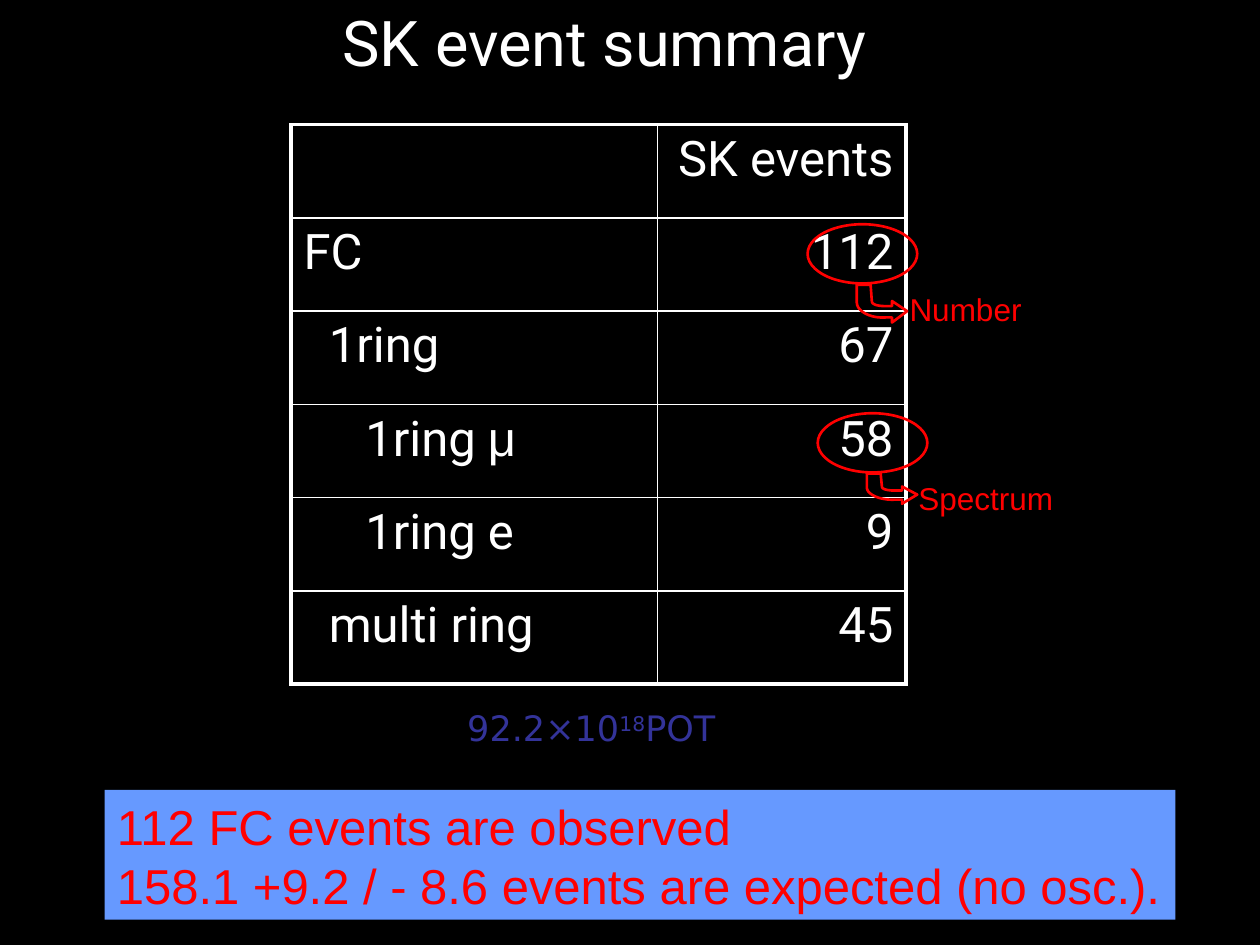
from dataclasses import dataclass

from lxml.etree import SubElement
from pptx import Presentation
from pptx.dml.color import RGBColor
from pptx.enum.shapes import MSO_SHAPE
from pptx.enum.text import PP_ALIGN
from pptx.oxml.ns import qn
from pptx.util import Inches, Pt

BLACK = RGBColor(0x00, 0x00, 0x00)
WHITE = RGBColor(0xFF, 0xFF, 0xFF)
RED = RGBColor(0xFF, 0x00, 0x00)
NAVY = RGBColor(0x33, 0x33, 0x99)
SKY = RGBColor(0x66, 0x99, 0xFF)

ARROW_START = [(0.4, 0.22), (0.28, 0.31), (0.28, 0.27), (0.23, 0.27)]
ARROW_OUTER = [(0.23, 0.27), (0.11, 0.28), (0, 0.22), (0, 0.15)]
ARROW_STEM = [(0, 0.01), (0.11, 0.01), (0.12, 0.14)]
ARROW_INNER = [(0.12, 0.14), (0.12, 0.17), (0.17, 0.18), (0.23, 0.18)]
ARROW_END = [(0.28, 0.18), (0.28, 0.14)]


@dataclass(frozen=True)
class TextStyle:
    font: str
    size: int
    color: RGBColor


@dataclass(frozen=True)
class Label:
    lines: tuple
    left: float
    top: float
    width: float
    height: float
    style: TextStyle
    fill: RGBColor | None = None


@dataclass(frozen=True)
class EventRow:
    name: str
    count: str
    indent: float = 0
    symbol: str = ""


@dataclass(frozen=True)
class Callout:
    left: float
    top: float
    arrow_stretch: float


TABLE_STYLE = TextStyle("Roboto", 28, WHITE)
NOTE_STYLE = TextStyle("Arial", 18, RED)
LABELS = [
    Label(("SK event summary",), 2.62, -0.02, 4.42, 0.7, TextStyle("Roboto", 36, WHITE)),
    Label((("92.2×10", "18", "POT"),), 3.61, 5.56, 2.25, 0.43,
          TextStyle("DejaVu Sans", 20, NAVY)),
    Label(("112 FC events are observed",
           "158.1 +9.2 / - 8.6 events are expected (no osc.)."),
          0.83, 6.27, 8.5, 1.03, TextStyle("Arial", 28, RED), SKY),
    Label(("Number",), 7.12, 2.25, 1.09, 0.4, NOTE_STYLE),
    Label(("Spectrum",), 7.19, 3.75, 1.27, 0.4, NOTE_STYLE),
]
ROWS = [
    EventRow("", "SK events"),
    EventRow("FC", "112"),
    EventRow("1ring", "67", 0.2),
    EventRow("1ring ", "58", 0.49, "μ"),
    EventRow("1ring e", "9", 0.49),
    EventRow("multi ring", "45", 0.2),
]
CALLOUTS = [Callout(6.41, 1.78, 1), Callout(6.49, 3.28, 0.8)]


def style_paragraph(para, style: TextStyle) -> None:
    para.font.name = style.font
    para.font.size = Pt(style.size)
    para.font.color.rgb = style.color


def add_label(page, label: Label) -> None:
    box = page.shapes.add_textbox(Inches(label.left), Inches(label.top),
                                  Inches(label.width), Inches(label.height))
    if label.fill is not None:
        box.fill.solid()
        box.fill.fore_color.rgb = label.fill
    frame = box.text_frame
    frame.word_wrap = False
    for index, line in enumerate(label.lines):
        para = frame.add_paragraph() if index else frame.paragraphs[0]
        style_paragraph(para, label.style)
        spans = (line,) if isinstance(line, str) else line
        for position, text in enumerate(spans):
            span = para.add_run()
            span.text = text
            if position == 1:
                span.font._element.set("baseline", "30000")


def set_border(cell, side: str, width: float) -> None:
    line = SubElement(cell._tc.get_or_add_tcPr(), qn(f"a:{side}"), w=str(Pt(width)))
    fill = SubElement(line, qn("a:solidFill"))
    SubElement(fill, qn("a:srgbClr"), val=str(WHITE))


def fill_cell(cell, text: str, outer_sides: set) -> None:
    for side in ("lnL", "lnR", "lnT", "lnB"):
        set_border(cell, side, 2.25 if side in outer_sides else 1)
    cell.fill.background()
    para = cell.text_frame.paragraphs[0]
    style_paragraph(para, TABLE_STYLE)
    if text:
        para.add_run().text = text


def add_event_table(page, rows: list[EventRow]) -> None:
    table = page.shapes.add_table(len(rows), 2, Inches(2.31), Inches(0.99),
                                  Inches(4.88), Inches(4.44)).table
    table.first_row = table.horz_banding = False
    table.columns[0].width = Inches(2.91)
    table.columns[1].width = Inches(1.97)
    for index, row in enumerate(rows):
        table.rows[index].height = Inches(0.74)
        edges = {0: {"lnT"}, len(rows) - 1: {"lnB"}}.get(index, set())
        name, count = table.cell(index, 0), table.cell(index, 1)
        fill_cell(name, row.name, edges | {"lnL"})
        fill_cell(count, row.count, edges | {"lnR"})
        name.margin_left = Inches(0.1 + row.indent)
        count.text_frame.paragraphs[0].alignment = PP_ALIGN.RIGHT
        if row.symbol:
            span = name.text_frame.paragraphs[0].add_run()
            span.text = row.symbol
            span.font.name = "Arial"


def curve(points: list, steps: int = 10) -> list:
    weights = [((1 - t) ** 3, 3 * t * (1 - t) ** 2, 3 * t * t * (1 - t), t ** 3)
               for t in (step / steps for step in range(1, steps + 1))]
    return [tuple(sum(w * point[axis] for w, point in zip(row, points)) for axis in (0, 1))
            for row in weights]


def outline_red(shape) -> None:
    shape.shadow.inherit = False
    shape.fill.background()
    shape.line.color.rgb = RED
    shape.line.width = Pt(1.5)


def add_callout(page, callout: Callout) -> None:
    outline_red(page.shapes.add_shape(MSO_SHAPE.OVAL, Inches(callout.left),
                                      Inches(callout.top), Inches(0.87), Inches(0.47)))
    outline = (ARROW_START + curve(ARROW_OUTER) + ARROW_STEM
               + curve(ARROW_INNER) + ARROW_END)
    points = [(Inches(callout.left + 0.39 + x),
               Inches(callout.top + 0.47 + y * callout.arrow_stretch)) for x, y in outline]
    builder = page.shapes.build_freeform(*points[0])
    builder.add_line_segments(points[1:], close=True)
    outline_red(builder.convert_to_shape())


def main() -> None:
    """Build the SK event summary slide."""
    deck = Presentation()
    deck.slide_width, deck.slide_height = Inches(10), Inches(7.5)
    page = deck.slides.add_slide(deck.slide_layouts[6])
    page.background.fill.solid()
    page.background.fill.fore_color.rgb = BLACK
    add_event_table(page, ROWS)
    for label in LABELS:
        add_label(page, label)
    for callout in CALLOUTS:
        add_callout(page, callout)
    deck.save("out.pptx")


if __name__ == "__main__":
    main()
